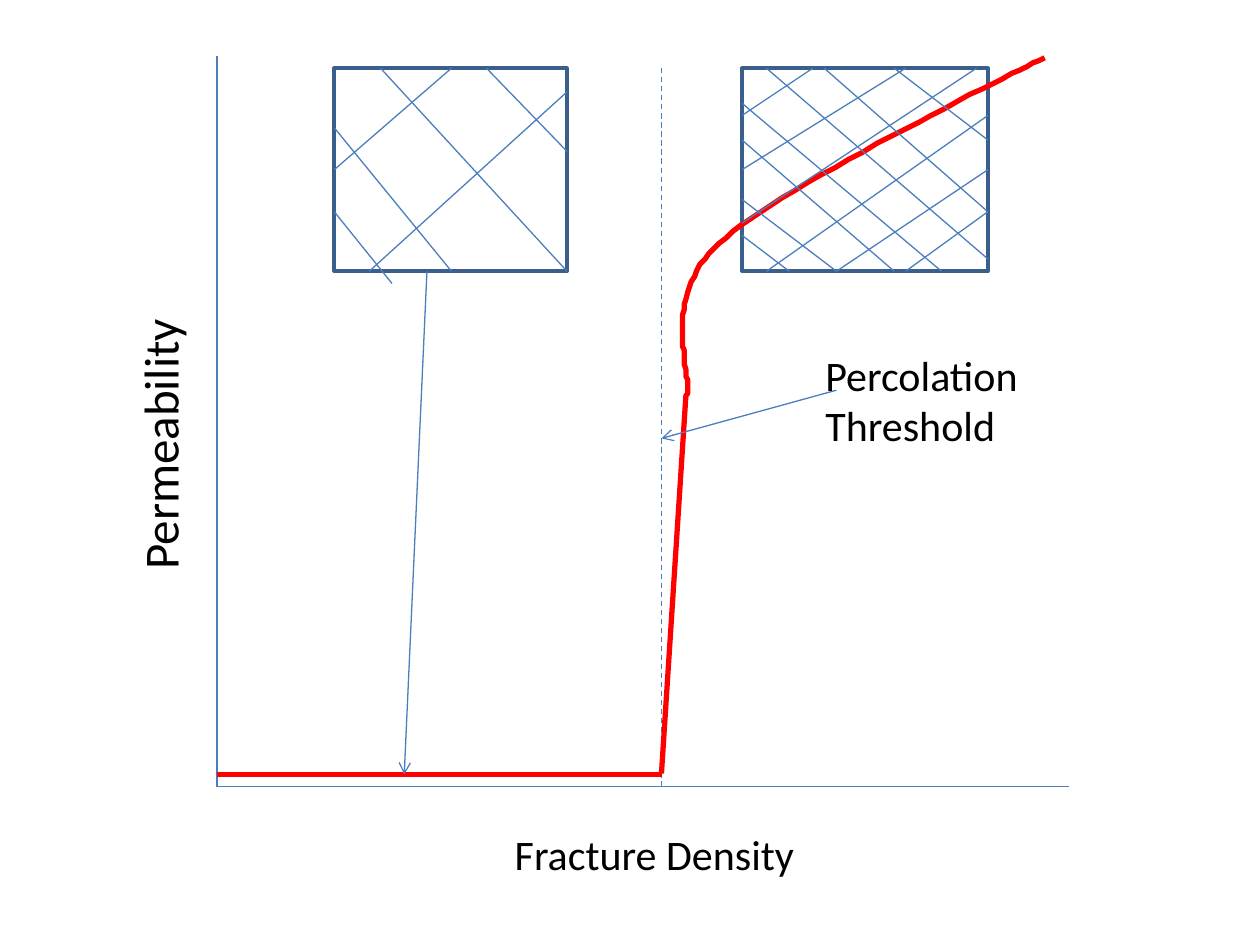
from dataclasses import dataclass

from lxml import etree
from pptx import Presentation
from pptx.dml.color import RGBColor
from pptx.enum.dml import MSO_LINE
from pptx.enum.shapes import MSO_CONNECTOR, MSO_SHAPE
from pptx.enum.text import PP_ALIGN
from pptx.oxml.ns import qn
from pptx.util import Pt

STRAIGHT = MSO_CONNECTOR.STRAIGHT
RECTANGLE = MSO_SHAPE.RECTANGLE
DASH = MSO_LINE.DASH
LEFT, CENTER = PP_ALIGN.LEFT, PP_ALIGN.CENTER


@dataclass(frozen=True)
class Theme:
    font: str = "Calibri"
    text: RGBColor = RGBColor(0x00, 0x00, 0x00)
    thin: RGBColor = RGBColor(0x4B, 0x7E, 0xBC)
    frame: RGBColor = RGBColor(0x3A, 0x5F, 0x8C)
    curve: RGBColor = RGBColor(0xFF, 0x00, 0x00)
    label_size: float = 24
    axis_size: float = 28
    thin_width: float = 0.75
    frame_width: float = 2
    curve_width: float = 3


THEME = Theme()

# Plot geometry in points
AXIS_X, AXIS_TOP, AXIS_Y, AXIS_RIGHT = 124, 32, 449.5, 611
THRESHOLD_X, BASELINE_Y = 378, 442.5
BLOCK_TOP, BLOCK_BOTTOM = 39, 155
SPARSE_LEFT, SPARSE_RIGHT = 191, 324
DENSE_LEFT, DENSE_RIGHT = 424, 564.5

SPARSE_FRACTURES = [
    (SPARSE_LEFT, 121, 224, 162),
    (SPARSE_LEFT, 73, 258, BLOCK_BOTTOM),
    (217.5, BLOCK_TOP, SPARSE_RIGHT, BLOCK_BOTTOM),
    (278, BLOCK_TOP, SPARSE_RIGHT, 86.5),
    (SPARSE_RIGHT, 52.5, 211, BLOCK_BOTTOM),
    (258, BLOCK_TOP, SPARSE_LEFT, 97),
]
DENSE_FRACTURES = [
    (DENSE_LEFT, 134.5, 451, BLOCK_BOTTOM),
    (DENSE_LEFT, 114, 478, BLOCK_BOTTOM),
    (DENSE_LEFT, 80, 511, BLOCK_BOTTOM),
    (DENSE_LEFT, 59, 538, BLOCK_BOTTOM),
    (438, BLOCK_TOP, DENSE_RIGHT, 148),
    (471, BLOCK_TOP, DENSE_RIGHT, 121),
    (511, BLOCK_TOP, DENSE_RIGHT, 80),
    (464.5, BLOCK_TOP, DENSE_LEFT, 66),
    (517.5, BLOCK_TOP, DENSE_LEFT, 97),
    (558, BLOCK_TOP, DENSE_LEFT, 127.5),
    (DENSE_RIGHT, 66, 438, BLOCK_BOTTOM),
    (DENSE_RIGHT, 97, 478, BLOCK_BOTTOM),
    (DENSE_RIGHT, 121, 517.5, BLOCK_BOTTOM),
]


def add_line(page, start, end, color=THEME.thin, width=THEME.thin_width,
             dash=None, arrow=False):
    line = page.shapes.add_connector(STRAIGHT, *map(Pt, (*start, *end)))
    line.line.color.rgb = color
    line.line.width = Pt(width)
    if dash:
        line.line.dash_style = dash
    if arrow:
        etree.SubElement(line.line._get_or_add_ln(), qn("a:tailEnd"), type="arrow")
    etree.SubElement(line._element.spPr, qn("a:effectLst"))


def outline(shape, color, width):
    """Leave the shape unfilled and without shadow, with a plain line."""
    shape.shadow.inherit = False
    shape.fill.background()
    shape.line.color.rgb = color
    shape.line.width = Pt(width)


def add_block(page, left, right):
    """Add the frame of a rock block."""
    block = page.shapes.add_shape(RECTANGLE, Pt(left), Pt(BLOCK_TOP), Pt(right - left),
                                  Pt(BLOCK_BOTTOM - BLOCK_TOP))
    outline(block, THEME.frame, THEME.frame_width)


def bezier(start, control1, control2, end, steps=32):
    """Return points along a cubic curve, without its start."""
    points = []
    for step in range(1, steps + 1):
        t = step / steps
        weights = ((1 - t) ** 3, 3 * t * (1 - t) ** 2, 3 * t * t * (1 - t), t ** 3)
        corners = (start, control1, control2, end)
        points.append(tuple(sum(w * c[axis] for w, c in zip(weights, corners))
                            for axis in (0, 1)))
    return points


def add_curve(page):
    """Add the steep rise of permeability beyond the threshold."""
    knee, bend = (392.5, 226), (411, 139)
    points = [knee]
    points += bezier(knee, (395.5, 211), (376.5, 171.5), bend)
    points += bezier(bend, (445, 106.5), (597, 33), (597, 33))
    builder = page.shapes.build_freeform(THRESHOLD_X, BASELINE_Y, scale=Pt(1))
    builder.add_line_segments(points, close=False)
    outline(builder.convert_to_shape(), THEME.curve, THEME.curve_width)


def add_text(page, lines, left, top, width, height, size=THEME.label_size,
             align=LEFT, rotation=0):
    box = page.shapes.add_textbox(*map(Pt, (left, top, width, height)))
    box.rotation = rotation
    frame = box.text_frame
    frame.word_wrap = True
    for index, line in enumerate(lines):
        para = frame.add_paragraph() if index else frame.paragraphs[0]
        para.alignment = align
        span = para.add_run()
        span.text = line
        span.font.name = THEME.font
        span.font.size = Pt(size)
        span.font.color.rgb = THEME.text


def main():
    deck = Presentation()
    deck.slide_width, deck.slide_height = Pt(720), Pt(540)
    page = deck.slides.add_slide(deck.slide_layouts[6])

    add_line(page, (AXIS_X, AXIS_TOP), (AXIS_X, AXIS_Y))
    add_line(page, (AXIS_X, AXIS_Y), (AXIS_RIGHT, AXIS_Y))
    add_block(page, SPARSE_LEFT, SPARSE_RIGHT)
    add_block(page, DENSE_LEFT, DENSE_RIGHT)
    add_line(page, (THRESHOLD_X, BLOCK_TOP), (THRESHOLD_X, AXIS_Y), dash=DASH)
    add_line(page, (AXIS_X, BASELINE_Y), (THRESHOLD_X, BASELINE_Y),
             color=THEME.curve, width=THEME.curve_width)
    add_curve(page)
    for x1, y1, x2, y2 in SPARSE_FRACTURES + DENSE_FRACTURES:
        add_line(page, (x1, y1), (x2, y2))

    add_text(page, ["Fracture Density"], 170.5, 470, 407, 44, align=CENTER)
    add_text(page, ["Permeability"], -8, 206, 205, 48,
             size=THEME.axis_size, rotation=270)
    add_line(page, (244, BLOCK_BOTTOM), (231, BASELINE_Y), arrow=True)
    add_line(page, (478, 223), (THRESHOLD_X, 250.5), arrow=True)
    add_text(page, ["Percolation", "Threshold"], 464.5, 196, 173.5, 79)

    deck.save("out.pptx")


if __name__ == "__main__":
    main()
